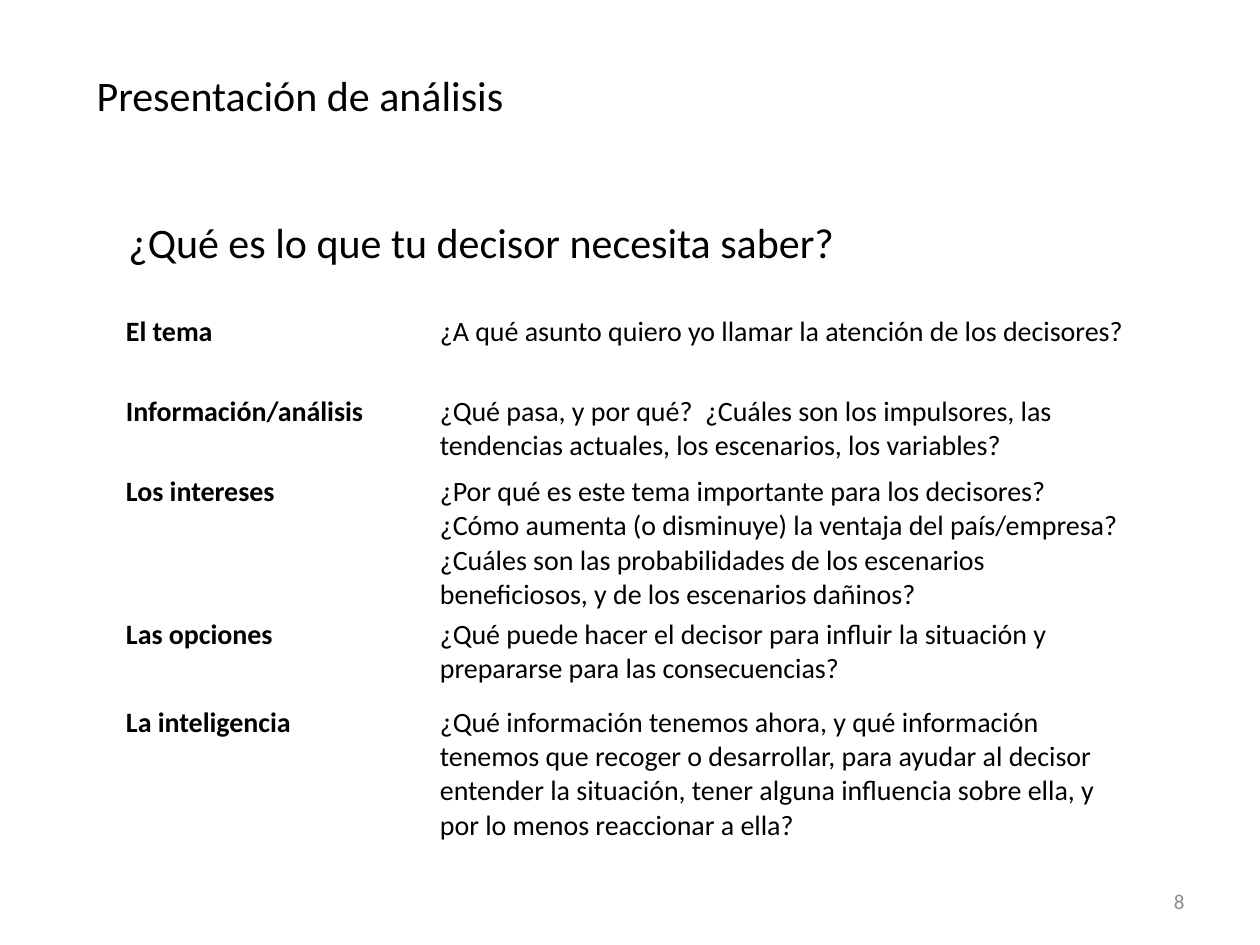
from dataclasses import dataclass

import pptx
import pptx.dml.color
import pptx.enum.text
import pptx.util

PX = 914400 // 126
ALIGN = pptx.enum.text.PP_ALIGN
ANCHOR = pptx.enum.text.MSO_ANCHOR


@dataclass(frozen=True)
class Theme:
    font: str = "Calibri"
    ink: str = "000000"
    muted: str = "8C8C8C"
    heading: int = 24
    body: int = 16
    footer: int = 12


@dataclass(frozen=True)
class Box:
    left: int
    top: int
    width: int
    height: int

    def emu(self) -> list[int]:
        return [px * PX for px in (self.left, self.top, self.width, self.height)]


@dataclass(frozen=True)
class Topic:
    name: str
    question: str
    height: int


THEME = Theme()
TITLE_BOX = Box(84, 63, 436, 63)
QUESTION_BOX = Box(116, 210, 738, 63)
NUMBER_BOX = Box(903, 876, 294, 50)
TABLE_LEFT, TABLE_TOP = 116, 315
COLUMN_WIDTHS = (314, 714)
CELL_FORMAT = {
    "margin_left": 10 * PX,
    "margin_right": 10 * PX,
    "margin_top": 0,
    "margin_bottom": 6 * PX,
    "vertical_anchor": ANCHOR.TOP,
}

TOPICS = (
    Topic("El tema", "¿A qué asunto quiero yo llamar la atención de los decisores?", 80),
    Topic(
        "Información/análisis",
        "¿Qué pasa, y por qué?  ¿Cuáles son los impulsores, las tendencias actuales, "
        "los escenarios, los variables?",
        80,
    ),
    Topic(
        "Los intereses",
        "¿Por qué es este tema importante para los decisores?  ¿Cómo aumenta (o disminuye) "
        "la ventaja del país/empresa? ¿Cuáles son las probabilidades de los escenarios "
        "beneficiosos, y de los escenarios dañinos?",
        143,
    ),
    Topic(
        "Las opciones",
        "¿Qué puede hacer el decisor para influir la situación y prepararse para las consecuencias?",
        88,
    ),
    Topic(
        "La inteligencia",
        "¿Qué información tenemos ahora, y qué información tenemos que recoger o desarrollar, "
        "para ayudar al decisor entender la situación, tener alguna influencia sobre ella, "
        "y por lo menos reaccionar a ella?",
        156,
    ),
)


def apply_format(target, values: dict) -> None:
    for attribute, value in values.items():
        setattr(target, attribute, value)


def write(frame, text: str, size: int, color: str = THEME.ink,
          bold: bool = False, align=ALIGN.LEFT) -> None:
    paragraph = frame.paragraphs[0]
    paragraph.alignment = align
    run = paragraph.add_run()
    run.text = text
    apply_format(run.font, {"name": THEME.font, "size": pptx.util.Pt(size), "bold": bold})
    run.font.color.rgb = pptx.dml.color.RGBColor.from_string(color)


def add_heading(shape, text: str) -> None:
    """Fill a title or text box with one unwrapped heading line."""
    apply_format(shape.text_frame, {
        "word_wrap": False,
        "auto_size": pptx.enum.text.MSO_AUTO_SIZE.SHAPE_TO_FIT_TEXT,
        "vertical_anchor": ANCHOR.TOP,
    })
    write(shape.text_frame, text, THEME.heading)


def add_topics(slide, topics: tuple[Topic, ...]) -> None:
    area = Box(TABLE_LEFT, TABLE_TOP, sum(COLUMN_WIDTHS), sum(t.height for t in topics))
    table = slide.shapes.add_table(len(topics), len(COLUMN_WIDTHS), *area.emu()).table
    apply_format(table, {"first_row": False, "horz_banding": False})
    for column, width in zip(table.columns, COLUMN_WIDTHS):
        column.width = width * PX
    for row, topic in zip(table.rows, topics):
        row.height = topic.height * PX
        for cell, text, bold in zip(row.cells, (topic.name, topic.question), (True, False)):
            apply_format(cell, CELL_FORMAT)
            cell.fill.background()
            write(cell.text_frame, text, THEME.body, bold=bold)


def main() -> None:
    presentation = pptx.Presentation()
    apply_format(presentation, {"slide_width": 1260 * PX, "slide_height": 945 * PX})
    slide = presentation.slides.add_slide(presentation.slide_layouts[5])

    title = slide.shapes.title
    apply_format(title, dict(zip(("left", "top", "width", "height"), TITLE_BOX.emu())))
    add_heading(title, "Presentación de análisis")
    add_topics(slide, TOPICS)
    add_heading(slide.shapes.add_textbox(*QUESTION_BOX.emu()),
                "¿Qué es lo que tu decisor necesita saber?")

    page_number = slide.shapes.add_textbox(*NUMBER_BOX.emu()).text_frame
    apply_format(page_number, {"word_wrap": True, "vertical_anchor": ANCHOR.MIDDLE})
    write(page_number, "8", THEME.footer, THEME.muted, align=ALIGN.RIGHT)

    presentation.save("out.pptx")


if __name__ == "__main__":
    main()
